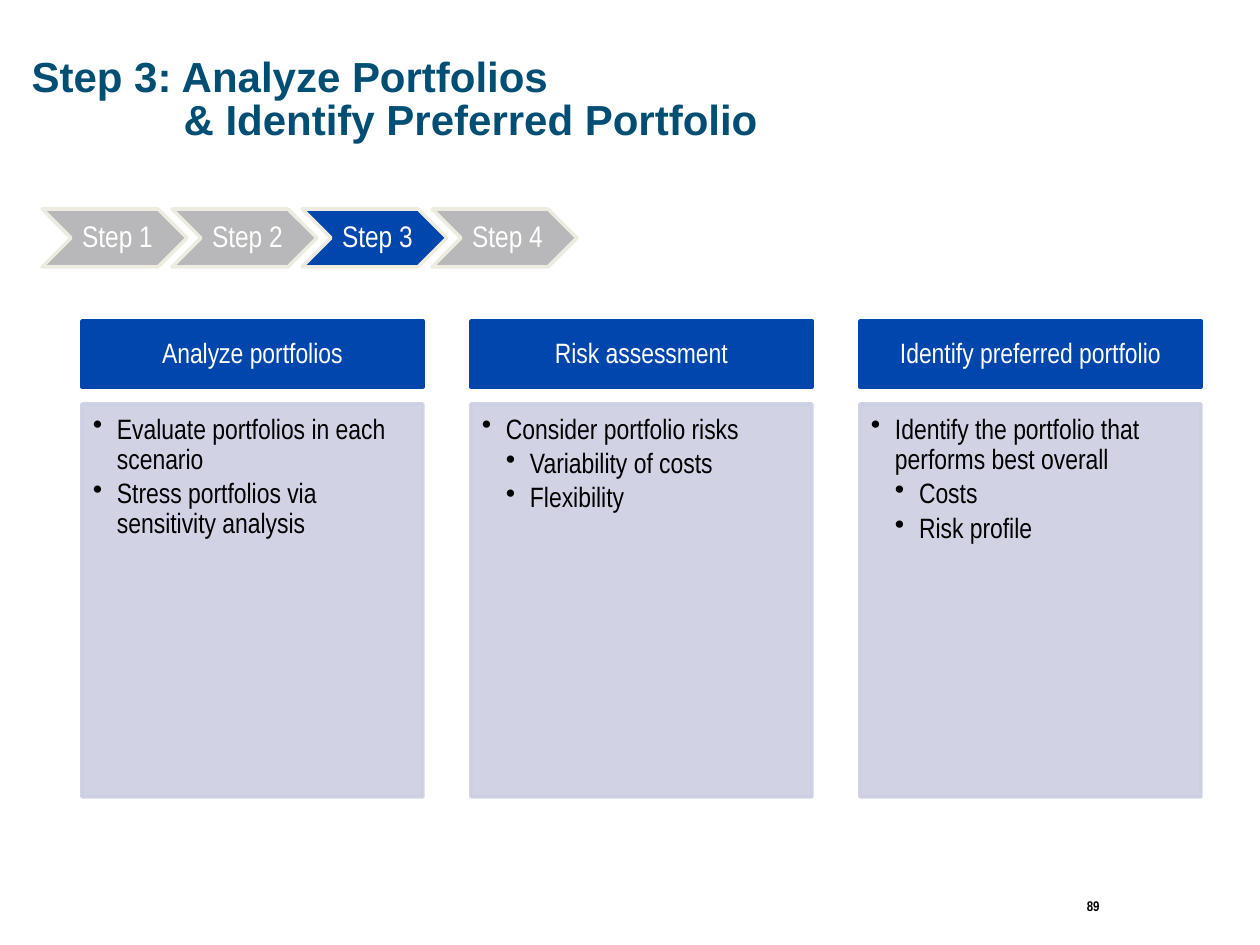
"""Build the Step 3 slide: a step tracker above three activity columns."""
from lxml import etree
from pptx import Presentation
from pptx.dml.color import RGBColor
from pptx.enum.shapes import MSO_SHAPE
from pptx.enum.text import MSO_ANCHOR, PP_ALIGN
from pptx.oxml.ns import qn
from pptx.util import Emu, Pt

RECTANGLE, CHEVRON = MSO_SHAPE.RECTANGLE, MSO_SHAPE.CHEVRON
TOP, MIDDLE = MSO_ANCHOR.TOP, MSO_ANCHOR.MIDDLE
LEFT, CENTER, RIGHT = PP_ALIGN.LEFT, PP_ALIGN.CENTER, PP_ALIGN.RIGHT

TITLE = "Step 3: Analyze Portfolios\v& Identify Preferred Portfolio"
PAGE_NUMBER = "89"
STEPS = ["Step 1", "Step 2", "Step 3", "Step 4"]
CURRENT_STEP = "Step 3"
COLUMNS = [
    ("Analyze portfolios", [
        (1, "Evaluate portfolios in each scenario"),
        (1, "Stress portfolios via sensitivity analysis")]),
    ("Risk assessment", [
        (1, "Consider portfolio risks"),
        (2, "Variability of costs"),
        (2, "Flexibility")]),
    ("Identify preferred portfolio", [
        (1, "Identify the portfolio that performs best overall"),
        (2, "Costs"),
        (2, "Risk profile")]),
]

TEAL = RGBColor(0x00, 0x4E, 0x74)
BLUE = RGBColor(0x00, 0x46, 0xAD)
GRAY = RGBColor(0xB8, 0xB8, 0xBA)
CREAM = RGBColor(0xEE, 0xEC, 0xE1)
LAVENDER = RGBColor(0xCC, 0xCF, 0xE3)
WHITE = RGBColor(0xFF, 0xFF, 0xFF)
BLACK = RGBColor(0x00, 0x00, 0x00)

HEADING_FONT, BODY_FONT = "Arial", "Arial Narrow"
TITLE_INDENT, BULLET_INDENT = 152, 24
STEP_LEFT, STEP_PITCH = 42, 130
COLUMN_LEFT, COLUMN_PITCH, COLUMN_WIDTH = 82, 389, 341


def px(count):
    return Emu(count * 914400 // 126)


def place(shape, left, top, width, height):
    shape.left, shape.top = px(left), px(top)
    shape.width, shape.height = px(width), px(height)


def set_insets(frame, left, top, right, bottom):
    frame.margin_left, frame.margin_top = px(left), px(top)
    frame.margin_right, frame.margin_bottom = px(right), px(bottom)


def format_para(para, size, color, align, font=BODY_FONT, bold=False, spacing=0.9):
    para.alignment, para.line_spacing = align, spacing
    for span in para.runs:
        span.font.name, span.font.size = font, Pt(size)
        span.font.bold, span.font.color.rgb = bold, color


def set_indent(para, left, first):
    properties = para._p.get_or_add_pPr()
    properties.set("marL", str(px(left)))
    properties.set("indent", str(px(first)))
    return properties


def add_box(page, kind, bounds, fill, line, insets, anchor=MIDDLE):
    box = page.shapes.add_shape(kind, *map(px, bounds))
    box.shadow.inherit = False
    box.fill.solid()
    box.fill.fore_color.rgb = fill
    box.line.color.rgb = line
    box.line.width = Pt(2)
    frame = box.text_frame
    frame.word_wrap, frame.vertical_anchor = True, anchor
    set_insets(frame, *insets)
    return box


def add_label(box, text, size):
    box.text_frame.text = text
    format_para(box.text_frame.paragraphs[0], size, WHITE, CENTER)


def make_translucent(box, percent):
    for color in box._element.spPr.iter(qn("a:srgbClr")):
        etree.SubElement(color, qn("a:alpha")).set("val", str(percent * 1000))


def add_bullets(box, items):
    frame = box.text_frame
    frame.text = "\n".join(text for _, text in items)
    for para, (level, _) in zip(frame.paragraphs, items):
        para.level = level
        properties = set_indent(para, level * BULLET_INDENT, -BULLET_INDENT)
        etree.SubElement(properties, qn("a:buChar")).set("char", "•")
        format_para(para, 16, BLACK, LEFT)
        para.space_after = Pt(2.4)


def add_title(page):
    title = page.shapes.title
    place(title, 19, 32, 834, 139)
    title.text_frame.text = TITLE
    title.text_frame.vertical_anchor = MIDDLE
    para = title.text_frame.paragraphs[0]
    set_indent(para, TITLE_INDENT, -TITLE_INDENT)
    format_para(para, 24, TEAL, LEFT, HEADING_FONT, True, 0.85)


def add_page_number(page):
    box = page.shapes.add_textbox(*map(px, (919, 891, 193, 54)))
    box.text_frame.word_wrap = True
    box.text_frame.text = PAGE_NUMBER
    format_para(box.text_frame.paragraphs[0], 8, BLACK, RIGHT, bold=True, spacing=1.0)


def main():
    deck = Presentation()
    deck.slide_width, deck.slide_height = px(1260), px(945)
    page = deck.slides.add_slide(deck.slide_layouts[5])
    add_title(page)
    add_page_number(page)

    for index, (heading, items) in enumerate(COLUMNS):
        left = COLUMN_LEFT + index * COLUMN_PITCH
        header = add_box(page, RECTANGLE, (left, 321, COLUMN_WIDTH, 66),
                         BLUE, BLUE, (15, 9, 15, 9))
        add_label(header, heading, 16)
        body = add_box(page, RECTANGLE, (left, 404, COLUMN_WIDTH, 393),
                       LAVENDER, LAVENDER, (11, 11, 15, 18), TOP)
        make_translucent(body, 90)
        add_bullets(body, items)

    for index, step in enumerate(STEPS):
        fill = BLUE if step == CURRENT_STEP else GRAY
        chevron = add_box(page, CHEVRON, (STEP_LEFT + index * STEP_PITCH, 209, 145, 58),
                          fill, CREAM, (9, 3, 3, 3))
        add_label(chevron, step, 17)

    deck.save("out.pptx")


if __name__ == "__main__":
    main()
